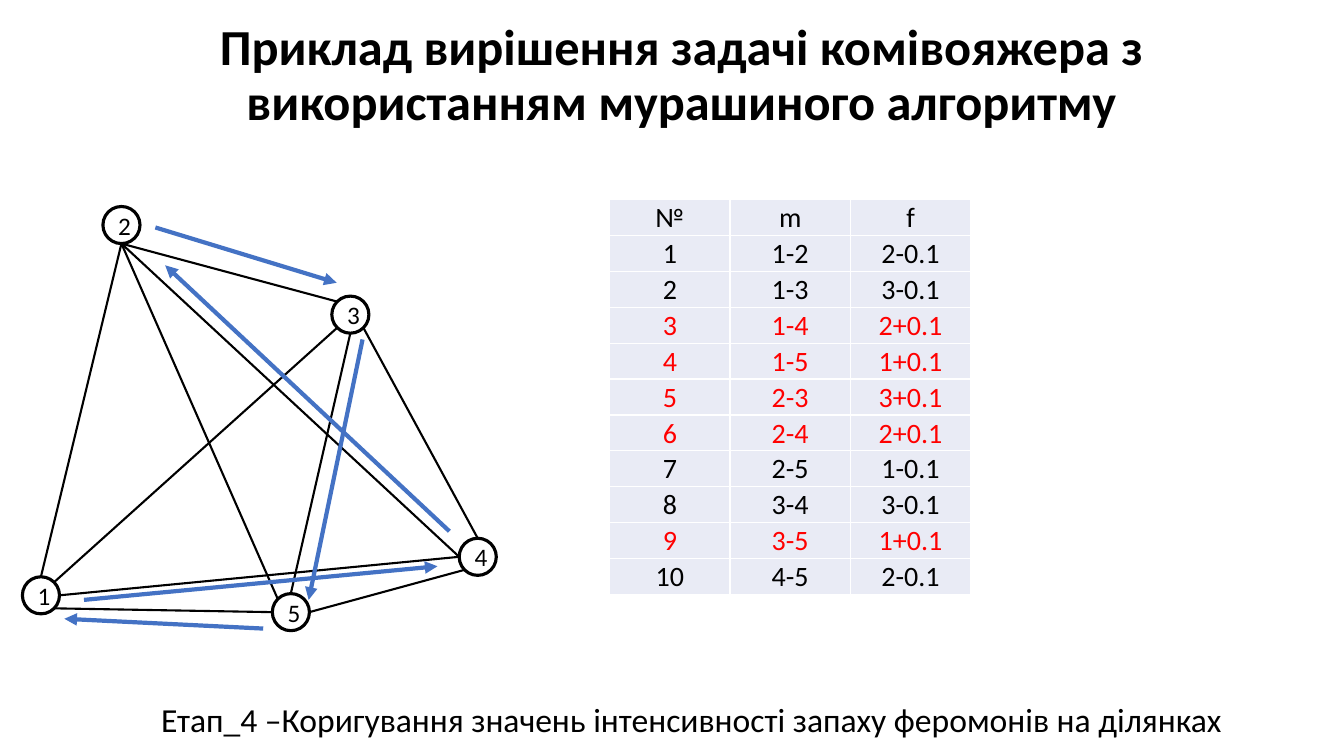
import itertools

import pptx
import pptx.dml.color
import pptx.enum.shapes
import pptx.enum.text
import pptx.oxml
import pptx.oxml.ns
import pptx.util
from pptx.util import Pt

COLORS = {"ink": "000000", "white": "FFFFFF", "arrow": "4472C4", "cell": "E9EBF5", "changed": "FF0000"}
FONT = "Calibri"
NODE = 26.5
NODES = {"1": (0, 264.5), "2": (57.5, 0), "3": (221, 64), "4": (312, 237), "5": (178.5, 276.5)}
# Points on a node's rim, as fractions of its size
RIM = {"top": (0.5, 0), "bottom": (0.5, 1), "left": (0, 0.5), "right": (1, 0.5),
       "top left": (0.15, 0.15), "top right": (0.85, 0.15),
       "bottom left": (0.15, 0.85), "bottom right": (0.85, 0.85)}
EDGES = [("1", "top", "2", "bottom"), ("1", "top right", "3", "bottom left"),
         ("1", "right", "4", "left"), ("1", "bottom right", "5", "left"),
         ("3", "top left", "2", "bottom"), ("4", "left", "2", "bottom"),
         ("5", "top left", "2", "bottom"), ("4", "top", "3", "bottom right"),
         ("5", "top", "3", "bottom"), ("5", "right", "4", "bottom left")]
ROUTE = [(305, 232, 102, 42), (95, 15, 224.5, 54.5), (243, 95, 204.5, 281),
         (172, 301.5, 30, 294.5), (44, 281, 296.5, 257)]
PHEROMONES = ["2-0.1", "3-0.1", "2+0.1", "1+0.1", "3+0.1", "2+0.1", "1-0.1", "3-0.1", "1+0.1", "2-0.1"]


def rgb(name):
    return pptx.dml.color.RGBColor.from_string(COLORS[name])


def write(tf, text, size, color="ink", bold=False):
    """Put one centred paragraph into a text frame."""
    tf.text = text
    p = tf.paragraphs[0]
    p.alignment = pptx.enum.text.PP_ALIGN.CENTER
    font = p.runs[0].font
    font.name, font.size, font.bold = FONT, Pt(size), bold
    font.color.rgb = rgb(color)
    return p


def add_text(s, box, text, size, bold=False):
    tf = s.shapes.add_textbox(*map(Pt, box)).text_frame
    tf.word_wrap = True
    write(tf, text, size, bold=bold)
    return tf


def add_line(s, ends, color, width, arrow=False):
    line = s.shapes.add_connector(pptx.enum.shapes.MSO_CONNECTOR.STRAIGHT, *map(Pt, ends))
    line.line.color.rgb = rgb(color)
    line.line.width = Pt(width)
    if arrow:
        ln = line.line._get_or_add_ln()
        ln.append(pptx.oxml.parse_xml(f'<a:tailEnd {pptx.oxml.ns.nsdecls("a")} type="triangle"/>'))
    line._element.spPr.append(pptx.oxml.parse_xml(f'<a:effectLst {pptx.oxml.ns.nsdecls("a")}/>'))


def add_title(s, box, text):
    tf = add_text(s, box, text, 36, bold=True)
    tf.vertical_anchor = pptx.enum.text.MSO_ANCHOR.MIDDLE
    tf.paragraphs[0].line_spacing = 0.9


def add_graph(s, left, top):
    for name, (x, y) in NODES.items():
        sp = s.shapes.add_shape(pptx.enum.shapes.MSO_SHAPE.FLOWCHART_CONNECTOR,
                                Pt(left + x), Pt(top + y), Pt(NODE), Pt(NODE))
        sp.shadow.inherit = False
        sp.fill.background()
        sp.line.color.rgb = rgb("ink")
        sp.line.width = Pt(2.25)
        sp.text_frame.vertical_anchor = pptx.enum.text.MSO_ANCHOR.MIDDLE
        write(sp.text_frame, name, 18)

    def rim_point(node, side):
        (x, y), (fx, fy) = NODES[node], RIM[side]
        return left + x + fx * NODE, top + y + fy * NODE

    for start, start_side, end, end_side in EDGES:
        add_line(s, rim_point(start, start_side) + rim_point(end, end_side), "ink", 1.5)
    for x1, y1, x2, y2 in ROUTE:
        add_line(s, (left + x1, top + y1, left + x2, top + y2), "arrow", 3, arrow=True)


def style_cell(cell):
    cell.fill.solid()
    cell.fill.fore_color.rgb = rgb("cell")
    cell.vertical_anchor = pptx.enum.text.MSO_ANCHOR.MIDDLE
    cell.margin_left = cell.margin_right = cell.margin_top = Pt(0.75)
    cell.margin_bottom = 0
    tcPr = cell._tc.get_or_add_tcPr()
    for i, side in enumerate(("lnL", "lnR", "lnT", "lnB")):
        tcPr.insert(i, pptx.oxml.parse_xml(
            f'<a:{side} {pptx.oxml.ns.nsdecls("a")} w="12700"><a:solidFill>'
            f'<a:srgbClr val="{COLORS["white"]}"/></a:solidFill></a:{side}>'))


def add_pheromone_table(s, box):
    pairs = itertools.combinations(NODES, 2)
    rows = [("№", "m", "f")]
    rows += [(str(i), "-".join(pair), f) for i, (pair, f) in enumerate(zip(pairs, PHEROMONES), 1)]
    table = s.shapes.add_table(len(rows), 3, *map(Pt, box)).table
    for row, values in zip(table.rows, rows):
        row.height = Pt(box[3] / len(rows))
        color = "changed" if "+" in values[2] else "ink"
        for cell, value in zip(row.cells, values):
            style_cell(cell)
            write(cell.text_frame, value, 20, color)


def main():
    prs = pptx.Presentation()
    prs.slide_width, prs.slide_height = Pt(960), Pt(540)
    s = prs.slides.add_slide(prs.slide_layouts[6])
    add_graph(s, 16, 147.5)
    add_title(s, (73, 6.5, 828, 96.5),
              "Приклад вирішення задачі комівояжера з використанням мурашиного алгоритму")
    add_pheromone_table(s, (435.5, 142.5, 258, 282.5))
    add_text(s, (80, 496, 828, 36),
             "Етап_4 –Коригування значень інтенсивності запаху феромонів на ділянках", 24)
    prs.save("out.pptx")


if __name__ == "__main__":
    main()
